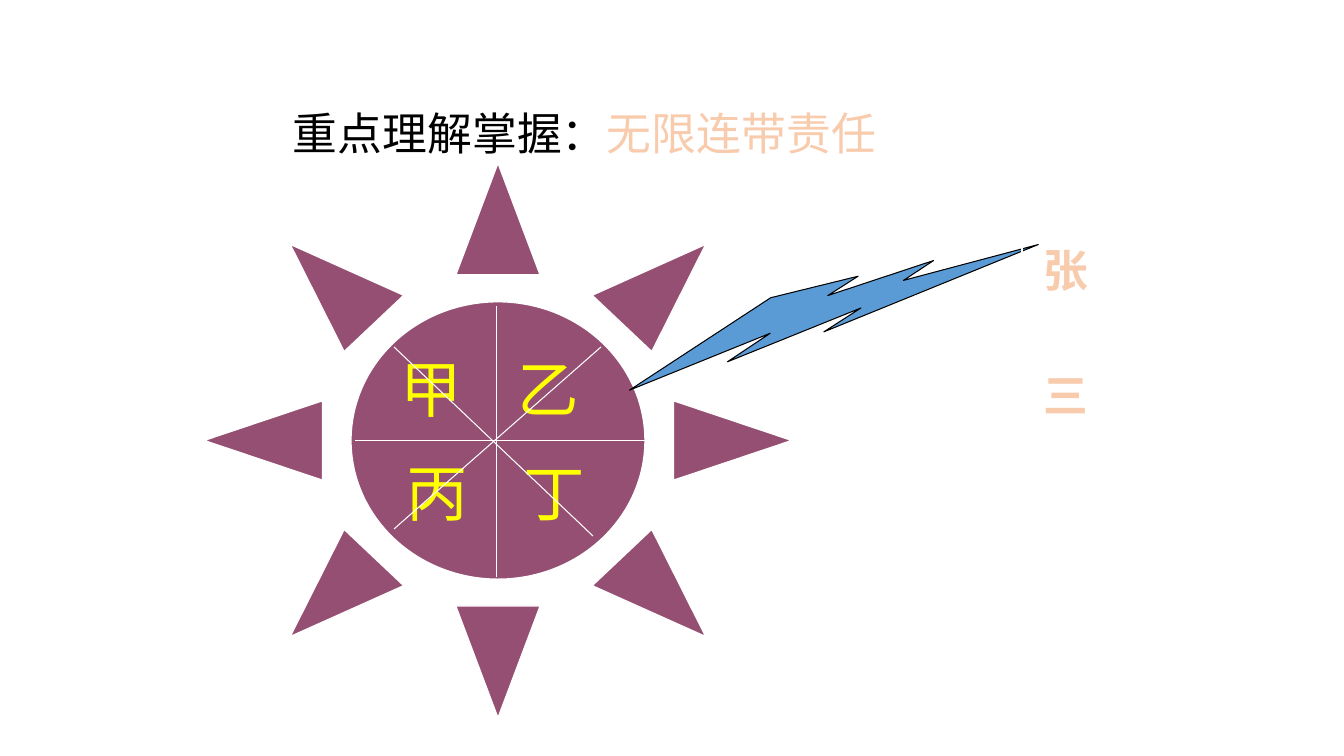
from dataclasses import dataclass

from lxml import etree
from pptx import Presentation
from pptx import util as u
from pptx.dml.color import RGBColor
from pptx.enum import shapes, text
from pptx.oxml import ns

EMU_PER_PX = 12192000 / 1344


@dataclass(frozen=True)
class Theme:
    font: str = "Noto Sans CJK JP"
    heading_pt: int = 32
    partner_pt: int = 44
    hairline_pt: float = 0.75
    sun_line_pt: float = 1
    ink: str = "000000"
    paper: str = "FFFFFF"
    accent: str = "F8CBAD"
    sun: str = "954F72"
    partner: str = "FFFF00"
    bolt: str = "5B9BD5"


THEME = Theme()


def px(*lengths):
    return [u.Emu(round(length * EMU_PER_PX)) for length in lengths]


def rgb(code):
    return RGBColor.from_string(code)


def style_run(run, size, color, bold=False):
    font = run.font
    font.name, font.size, font.bold = THEME.font, u.Pt(size), bold
    font.color.rgb = rgb(color)
    east_asian = etree.SubElement(run._r.get_or_add_rPr(), ns.qn("a:ea"))
    east_asian.set("typeface", THEME.font)


def prepare_frame(frame, anchor, left=0):
    frame.margin_top = frame.margin_right = frame.margin_bottom = 0
    frame.margin_left = px(left)[0]
    frame.word_wrap = True
    frame.auto_size = text.MSO_AUTO_SIZE.NONE
    frame.vertical_anchor = anchor


def add_preset(slide, preset, box, fill, line, width):
    preset_shape = slide.shapes.add_shape(preset, *px(*box))
    preset_shape.shadow.inherit = False
    if fill:
        preset_shape.fill.solid()
        preset_shape.fill.fore_color.rgb = rgb(fill)
    else:
        preset_shape.fill.background()
    preset_shape.line.color.rgb = rgb(line)
    preset_shape.line.width = u.Pt(width)
    return preset_shape


def add_heading(slide, box):
    heading = slide.shapes.title
    heading.left, heading.top, heading.width, heading.height = px(*box)
    prepare_frame(heading.text_frame, text.MSO_ANCHOR.MIDDLE)
    paragraph = heading.text_frame.paragraphs[0]
    paragraph.alignment = text.PP_ALIGN.LEFT
    for words, color in (("重点理解掌握：", THEME.ink), ("无限连带责任", THEME.accent)):
        run = paragraph.add_run()
        run.text = words
        style_run(run, THEME.heading_pt, color)


def add_spokes(slide, box, spokes):
    left, top = box[:2]
    for x1, y1, x2, y2 in spokes:
        spoke = slide.shapes.add_connector(
            shapes.MSO_CONNECTOR.STRAIGHT,
            *px(left + x1, top + y1, left + x2, top + y2))
        spoke.line.color.rgb = rgb(THEME.paper)
        spoke.line.width = u.Pt(THEME.hairline_pt)
        etree.SubElement(spoke._element.spPr, ns.qn("a:effectLst"))


def add_partners(slide, box):
    left, top = box[:2]
    column_gap, row_gap, row_shift = 117, 104, 6
    for row, names in enumerate(("甲乙", "丙丁")):
        for column, name in enumerate(names):
            partner = slide.shapes.add_textbox(*px(
                left + 187 + column * column_gap + row * row_shift,
                top + 180 + row * row_gap, 80, 90))
            prepare_frame(partner.text_frame, text.MSO_ANCHOR.MIDDLE)
            partner.text_frame.text = name
            paragraph = partner.text_frame.paragraphs[0]
            paragraph.alignment = text.PP_ALIGN.CENTER
            style_run(paragraph.runs[0], THEME.partner_pt, THEME.partner)


def add_partnership(slide, box):
    add_preset(slide, shapes.MSO_SHAPE.SUN, box,
               THEME.sun, THEME.paper, THEME.sun_line_pt)
    add_spokes(slide, box, ((151, 278, 444, 278), (293, 143, 293, 414)))
    add_partners(slide, box)
    add_spokes(slide, box, ((190, 184, 389, 373), (397, 184, 190, 366)))


def add_claim(slide, box):
    bolt = add_preset(slide, shapes.MSO_SHAPE.LIGHTNING_BOLT, box,
                      THEME.bolt, THEME.ink, THEME.hairline_pt)
    bolt.rotation = 331.7


def add_creditor(slide, box):
    creditor = add_preset(slide, shapes.MSO_SHAPE.RECTANGLE, box,
                          None, THEME.paper, THEME.hairline_pt)
    frame = creditor.text_frame
    prepare_frame(frame, text.MSO_ANCHOR.TOP, left=22)
    frame.text = "张\n三"
    for paragraph in frame.paragraphs:
        paragraph.alignment = text.PP_ALIGN.LEFT
        style_run(paragraph.runs[0], THEME.heading_pt, THEME.accent, bold=True)
    frame.paragraphs[1].space_before = u.Pt(51)


def main():
    deck = Presentation()
    deck.slide_width, deck.slide_height = px(1344, 756)
    slide = deck.slides.add_slide(deck.slide_layouts[5])
    add_heading(slide, (293, 100, 620, 65))
    add_partnership(slide, (204, 163, 588, 555))
    add_claim(slide, (616, 271, 429, 80))
    add_creditor(slide, (1022, 243, 74, 207))
    deck.save("out.pptx")


if __name__ == "__main__":
    main()
